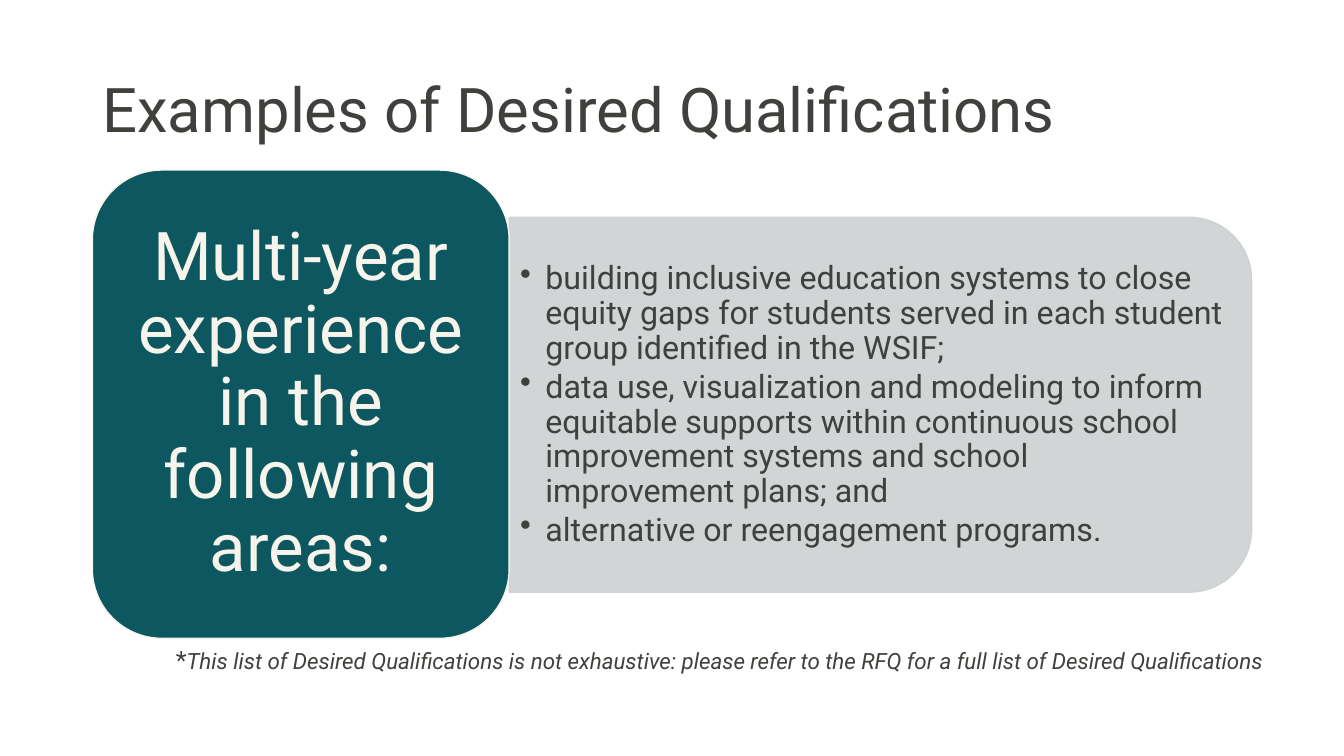
"""Build the slide that lists examples of desired qualifications."""
from dataclasses import dataclass

import pptx
import pptx.dml.color
import pptx.enum.shapes
import pptx.enum.text
import pptx.oxml
import pptx.oxml.ns
import pptx.util

TITLE = "Examples of Desired Qualifications"
LABEL = "Multi-year experience in the following areas:"
AREAS = [
    "building inclusive education systems to close equity gaps for students served in each student group identified in the WSIF;",
    "data use, visualization and modeling to inform equitable supports within continuous school improvement systems and school improvement plans; and",
    "alternative or reengagement programs.",
]
FOOTNOTE_MARK = "*"
FOOTNOTE = "This list of Desired Qualifications is not exhaustive: please refer to the RFQ for a full list of Desired Qualifications"

EMU_PER_PX = 9525
SLIDE_SIZE = (1280, 720)
TITLE_BOX = (88, 38, 1104, 139)
PANEL_BOX = (485, 207, 707, 357)
AREAS_BOX = (486, 225, 689, 322)
CARD_BOX = (88, 162, 397, 446)
FOOTNOTE_BOX = (158, 609, 1056, 38)
BULLET_INDENT = 24
CARD_INSETS = (19, 10)
PANEL_OPACITY = 90


@dataclass(frozen=True)
class Theme:
    """Colours, font and type sizes of the slide."""
    font: str = "Roboto"
    ink: str = "40403D"
    teal: str = "0D5761"
    cream: str = "F7F5EB"
    grey: str = "CCD1D2"
    title: int = 44
    label: int = 48
    area: int = 23
    mark: int = 18
    footnote: int = 16


THEME = Theme()
SHAPES = pptx.enum.shapes.MSO_SHAPE
ALIGN = pptx.enum.text.PP_ALIGN
MIDDLE = pptx.enum.text.MSO_ANCHOR.MIDDLE


def px(length):
    """Turn px into EMU."""
    return pptx.util.Emu(round(length * EMU_PER_PX))


def rgb(colour):
    """Turn a hex string into a colour."""
    return pptx.dml.color.RGBColor.from_string(colour)


def format_run(run, size, colour, italic=False):
    """Set the font of one run."""
    run.font.name = THEME.font
    run.font.size = pptx.util.Pt(size)
    run.font.color.rgb = rgb(colour)
    run.font.italic = italic


def write(paragraph, text, size, colour, align=ALIGN.LEFT):
    """Fill and format a tightly set paragraph."""
    paragraph.text = text
    paragraph.alignment = align
    paragraph.line_spacing = 0.9
    format_run(paragraph.runs[0], size, colour)


def add_bullet(paragraph):
    """Give a paragraph a hanging bullet."""
    properties = paragraph._p.get_or_add_pPr()
    properties.set("marL", str(px(BULLET_INDENT)))
    properties.set("indent", str(-px(BULLET_INDENT)))
    bullet = pptx.oxml.parse_xml(f'<a:buChar {pptx.oxml.ns.nsdecls("a")} char="•"/>')
    properties.append(bullet)


def add_block(slide, preset, box, fill, line):
    """Add a filled and outlined preset shape."""
    shape = slide.shapes.add_shape(preset, *map(px, box))
    shape.shadow.inherit = False
    shape.fill.solid()
    shape.fill.fore_color.rgb = rgb(fill)
    shape.line.color.rgb = rgb(line)
    shape.line.width = pptx.util.Pt(1)
    return shape


def add_text_box(slide, box):
    """Add a wrapping text box and return its frame."""
    frame = slide.shapes.add_textbox(*map(px, box)).text_frame
    frame.word_wrap = True
    return frame


def add_title(slide):
    """Place and format the title placeholder."""
    title = slide.shapes.title
    title.left, title.top, title.width, title.height = map(px, TITLE_BOX)
    title.text_frame.vertical_anchor = MIDDLE
    write(title.text_frame.paragraphs[0], TITLE, THEME.title, THEME.ink)


def add_panel(slide):
    """Add the translucent panel, turned so its round corners face right."""
    left, top, width, height = PANEL_BOX
    shift = (width - height) / 2
    upright = (left + shift, top - shift, height, width)
    panel = add_block(slide, SHAPES.ROUND_2_SAME_RECTANGLE, upright, THEME.grey, THEME.grey)
    panel.rotation = 90
    for colour in panel._element.spPr.iter(pptx.oxml.ns.qn("a:srgbClr")):
        alpha = f'<a:alpha {pptx.oxml.ns.nsdecls("a")} val="{PANEL_OPACITY * 1000}"/>'
        colour.append(pptx.oxml.parse_xml(alpha))


def add_areas(slide):
    """Add the bulleted list of areas."""
    frame = add_text_box(slide, AREAS_BOX)
    frame.vertical_anchor = MIDDLE
    for index, area in enumerate(AREAS):
        paragraph = frame.add_paragraph() if index else frame.paragraphs[0]
        paragraph.level = 1
        write(paragraph, area, THEME.area, THEME.ink)
        paragraph.space_after = pptx.util.Pt(3)
        add_bullet(paragraph)


def add_card(slide):
    """Add the card that introduces the list."""
    card = add_block(slide, SHAPES.ROUNDED_RECTANGLE, CARD_BOX, THEME.teal, THEME.cream)
    frame = card.text_frame
    frame.word_wrap = True
    frame.vertical_anchor = MIDDLE
    frame.margin_left = frame.margin_right = px(CARD_INSETS[0])
    frame.margin_top = frame.margin_bottom = px(CARD_INSETS[1])
    write(frame.paragraphs[0], LABEL, THEME.label, THEME.cream, ALIGN.CENTER)


def add_footnote(slide):
    """Add the footnote with its larger mark."""
    frame = add_text_box(slide, FOOTNOTE_BOX)
    frame.auto_size = pptx.enum.text.MSO_AUTO_SIZE.SHAPE_TO_FIT_TEXT
    pieces = [(FOOTNOTE_MARK, THEME.mark, False), (FOOTNOTE, THEME.footnote, True)]
    for text, size, italic in pieces:
        run = frame.paragraphs[0].add_run()
        run.text = text
        format_run(run, size, THEME.ink, italic)


def main():
    """Build and save the presentation."""
    presentation = pptx.Presentation()
    presentation.slide_width, presentation.slide_height = map(px, SLIDE_SIZE)
    slide = presentation.slides.add_slide(presentation.slide_layouts[5])
    add_title(slide)
    add_panel(slide)
    add_areas(slide)
    add_card(slide)
    add_footnote(slide)
    presentation.save("out.pptx")


if __name__ == "__main__":
    main()
